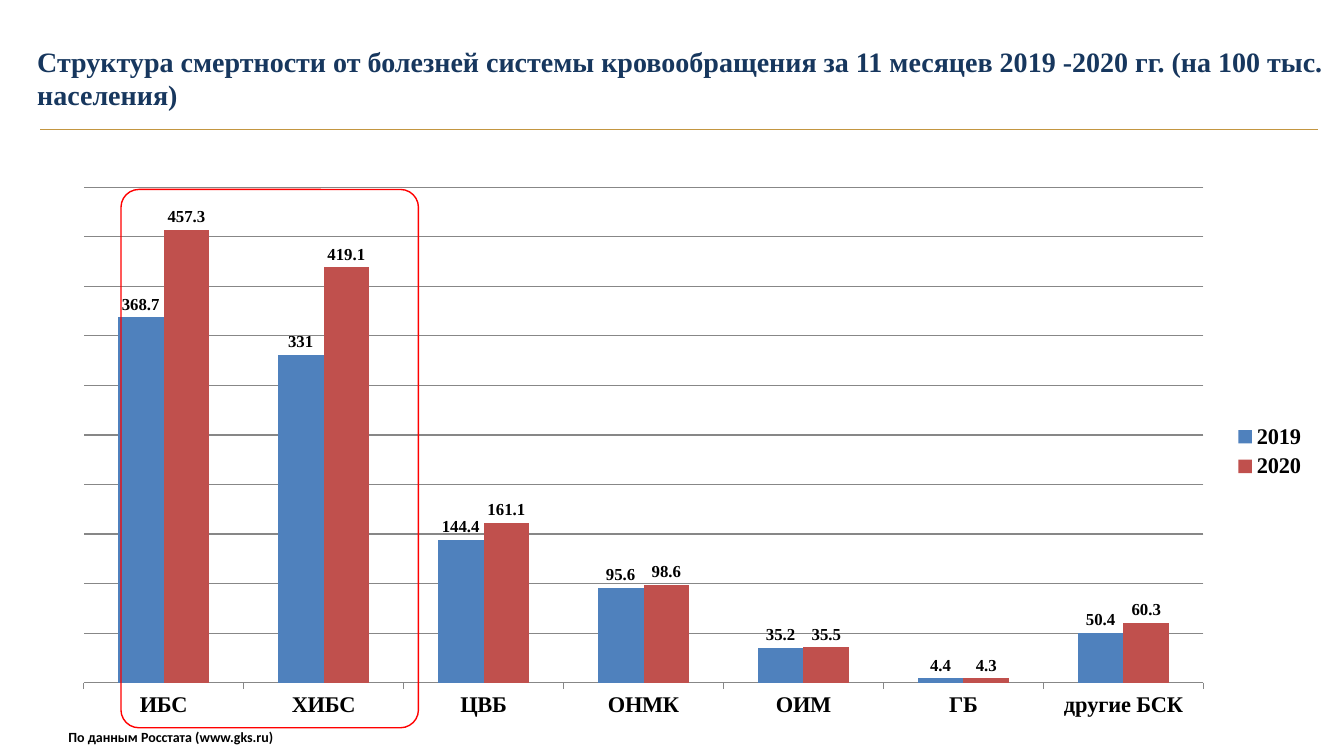
"""Builds the slide on the structure of mortality from circulatory diseases."""
from lxml import etree
from pptx import Presentation
from pptx.chart.data import CategoryChartData
from pptx.dml.color import RGBColor
from pptx.enum.chart import XL_CHART_TYPE, XL_LABEL_POSITION, XL_LEGEND_POSITION, XL_TICK_LABEL_POSITION, XL_TICK_MARK
from pptx.enum.shapes import MSO_CONNECTOR, MSO_SHAPE
from pptx.enum.text import MSO_AUTO_SIZE
from pptx.oxml import parse_xml
from pptx.oxml.ns import nsdecls, qn
from pptx.util import Inches, Pt

COLUMNS = XL_CHART_TYPE.COLUMN_CLUSTERED
OUTSIDE_END = XL_LABEL_POSITION.OUTSIDE_END
LEGEND_RIGHT = XL_LEGEND_POSITION.RIGHT
LABELS_LOW = XL_TICK_LABEL_POSITION.LOW
TICK_OUT = XL_TICK_MARK.OUTSIDE
STRAIGHT = MSO_CONNECTOR.STRAIGHT
ROUNDED = MSO_SHAPE.ROUNDED_RECTANGLE
FIT_SHAPE = MSO_AUTO_SIZE.SHAPE_TO_FIT_TEXT

CAUSES = ["ИБС", "ХИБС", "ЦВБ", "ОНМК", "ОИМ", "ГБ", "другие БСК"]
RATES = {
    "2019": ("4F81BD", [368.7, 331, 144.4, 95.6, 35.2, 4.4, 50.4]),
    "2020": ("C0504D", [457.3, 419.1, 161.1, 98.6, 35.5, 4.3, 60.3]),
}


def color(value):
    return RGBColor.from_string(value)


class MortalitySlide:
    serif = "Times New Roman"
    sans = "Calibri"
    black = "000000"
    navy = "17375E"
    gold = "C39641"
    gray = "878787"
    red = "FF0000"

    def __init__(self, presentation):
        self.slide = presentation.slides.add_slide(presentation.slide_layouts[6])
        self.shapes = self.slide.shapes

    def style_font(self, font, size, name=serif, ink=black):
        font.name = name
        font.size = Pt(size)
        font.bold = True
        font.color.rgb = color(ink)

    def style_line(self, line, ink, width):
        line.color.rgb = color(ink)
        line.width = Pt(width)

    def text(self, box, words, size, name, ink, wrap):
        frame = self.shapes.add_textbox(*map(Inches, box)).text_frame
        frame.word_wrap = wrap
        frame.auto_size = FIT_SHAPE
        frame.text = words
        self.style_font(frame.paragraphs[0].runs[0].font, size, name, ink)

    def rule(self, left, right, y):
        divider = self.shapes.add_connector(
            STRAIGHT, Inches(left), Inches(y), Inches(right), Inches(y))
        self.style_line(divider.line, self.gold, 0.7)
        etree.SubElement(divider.element.spPr, qn("a:effectLst"))

    def frame(self, box, rounding):
        highlight = self.shapes.add_shape(ROUNDED, *map(Inches, box))
        highlight.adjustments[0] = rounding
        highlight.shadow.inherit = False
        highlight.fill.background()
        self.style_line(highlight.line, self.red, 1)

    def columns(self, box, plot_box):
        data = CategoryChartData()
        data.categories = CAUSES
        for year, (_, values) in RATES.items():
            data.add_series(year, values)
        chart = self.shapes.add_chart(COLUMNS, *map(Inches, box), data).chart
        chart.has_title = False
        chart.font.name = "Arial"
        chart.font.size = Pt(10)
        chart.font.color.rgb = color(self.black)

        plot = chart.plots[0]
        plot.gap_width = 150
        plot.overlap = 0
        plot.vary_by_categories = False
        for series in plot.series:
            series.format.fill.solid()
            series.format.fill.fore_color.rgb = color(RATES[series.name][0])
            labels = series.data_labels
            labels.show_value = True
            labels.position = OUTSIDE_END
            self.style_font(labels.font, 12)

        causes = chart.category_axis
        causes.major_tick_mark = TICK_OUT
        causes.tick_label_position = LABELS_LOW
        self.style_font(causes.tick_labels.font, 16)
        self.style_line(causes.format.line, self.gray, 0.75)

        rates = chart.value_axis
        rates.minimum_scale = 0
        rates.maximum_scale = 500
        rates.major_unit = 50
        rates.visible = False
        rates.has_major_gridlines = True
        self.style_line(rates.major_gridlines.format.line, self.gray, 0.75)

        chart.has_legend = True
        chart.legend.position = LEGEND_RIGHT
        chart.legend.include_in_layout = False
        self.style_font(chart.legend.font, 16)
        self.place_plot(chart, plot_box)

    def place_plot(self, chart, plot_box):
        area = chart.element.find(".//" + qn("c:plotArea"))
        for previous in area.findall(qn("c:layout")):
            area.remove(previous)
        sizes = "".join(f'<c:{key} val="{share}"/>' for key, share in zip("xywh", plot_box))
        area.insert(0, parse_xml(
            f'<c:layout {nsdecls("c")}><c:manualLayout><c:layoutTarget val="inner"/>'
            f'<c:xMode val="edge"/><c:yMode val="edge"/>{sizes}</c:manualLayout></c:layout>'))


def main():
    presentation = Presentation()
    presentation.slide_width = Inches(13.33)
    presentation.slide_height = Inches(7.5)
    page = MortalitySlide(presentation)
    page.columns((0.58, 1.75, 12.48, 5.46), (0.02, 0.02, 0.89, 0.9))
    page.text((0.27, 0.39, 13.07, 0.77),
              "Структура смертности от болезней системы кровообращения "
              "за 11 месяцев 2019 -2020 гг. (на 100 тыс. населения)",
              20, page.serif, page.navy, True)
    page.rule(0.4, 13.07, 1.28)
    page.frame((1.2, 1.88, 2.95, 5.34), 0.06)
    page.text((0.58, 7.18, 2.27, 0.27), "По данным Росстата (www.gks.ru)",
              10, page.sans, page.black, False)
    presentation.save("out.pptx")


if __name__ == "__main__":
    main()
